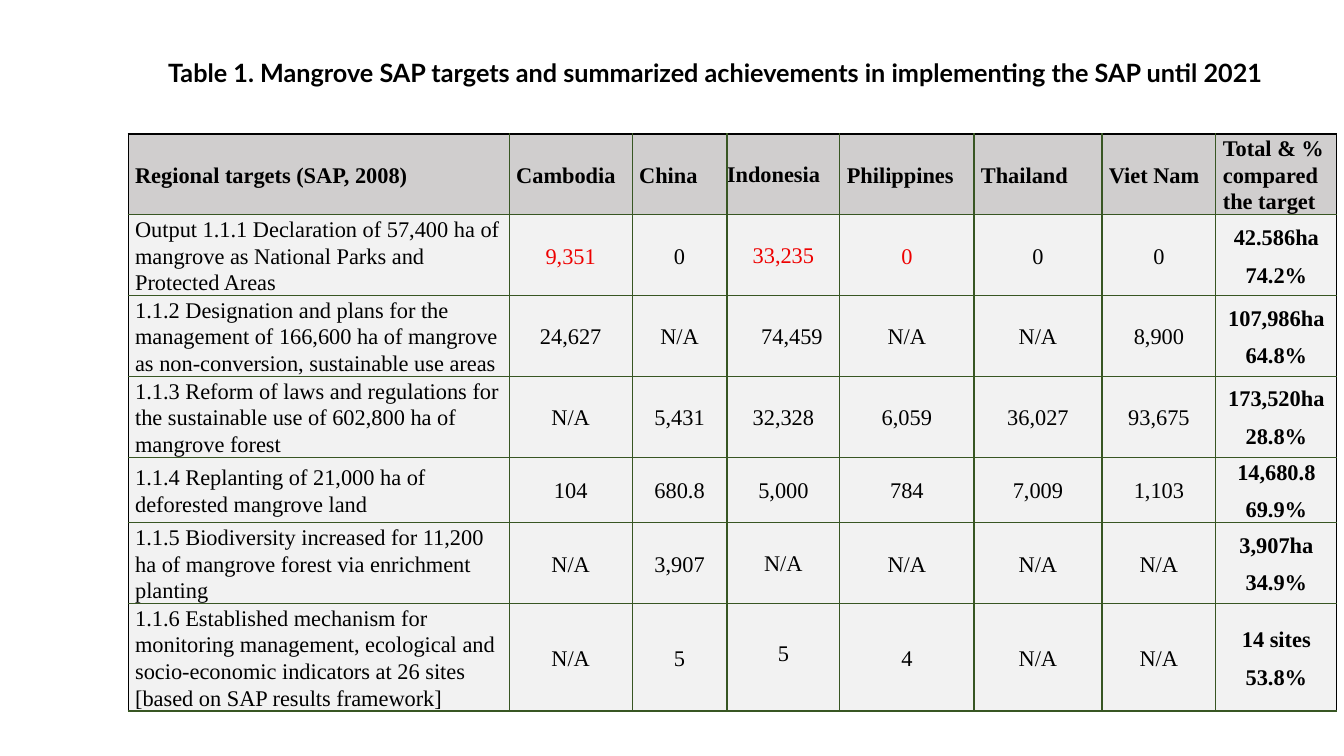
from dataclasses import dataclass

from lxml.etree import SubElement
from pptx import Presentation
from pptx.dml.color import RGBColor
from pptx.enum.text import MSO_ANCHOR, PP_ALIGN
from pptx.oxml.ns import qn
from pptx.slide import Slide
from pptx.table import _Cell
from pptx.text.text import TextFrame
from pptx.util import Inches, Length, Pt


@dataclass(frozen=True)
class Theme:
    title_font: str = "Lato"
    table_font: str = "Times New Roman"
    title_size: int = 18
    table_size: int = 16
    text: str = "000000"
    highlight: str = "EE0000"
    header_fill: str = "D0CECE"
    body_fill: str = "F2F2F2"
    inner_border: str = "385623"
    outer_border: str = "000000"
    border_width: int = 1


@dataclass(frozen=True)
class Target:
    name: str
    countries: tuple[str, ...]
    total: str
    share: str
    highlighted: tuple[int, ...] = ()


@dataclass(frozen=True)
class Margins:
    left: float = 0.07
    top: float = 0.01
    right: float = 0.07
    bottom: float = 0


THEME = Theme()
SLIDE_WIDTH = Inches(13.33)
SLIDE_HEIGHT = Inches(7.5)
COLUMNS = (3.78, 1.22, 0.94, 1.12, 1.33, 1.27, 1.13, 1.2)
ROWS = (0.76, 0.76, 0.76, 0.76, 0.65, 0.71, 1.02)
INDONESIA = 3
TOTAL = len(COLUMNS) - 1
TIGHT = Margins(0, 0, 0, 0)
SPECIAL_MARGINS = {
    (2, INDONESIA): Margins(0.17, 0, 0, 0),
    (6, INDONESIA): Margins(0, 0, 0, 0.08),
}
TITLE = "Table 1. Mangrove SAP targets and summarized achievements in implementing the SAP until 2021"
HEADERS = (
    "Regional targets (SAP, 2008)", "Cambodia", "China", "Indonesia",
    "Philippines", "Thailand", "Viet Nam", "Total & % compared the target",
)
TARGETS = (
    Target("Output 1.1.1 Declaration of 57,400 ha of mangrove as National Parks and Protected Areas",
           ("9,351", "0", "33,235", "0", "0", "0"), "42.586ha", "74.2%", (1, 3, 4)),
    Target("1.1.2 Designation and plans for the management of 166,600 ha of mangrove "
           "as non-conversion, sustainable use areas",
           ("24,627", "N/A", "74,459", "N/A", "N/A", "8,900"), "107,986ha", "64.8%"),
    Target("1.1.3 Reform of laws and regulations for the sustainable use of 602,800 ha of mangrove forest",
           ("N/A", "5,431", "32,328", "6,059", "36,027", "93,675"), "173,520ha", "28.8%"),
    Target("1.1.4 Replanting of 21,000 ha of deforested mangrove land",
           ("104", "680.8", "5,000", "784", "7,009", "1,103"), "14,680.8", "69.9%"),
    Target("1.1.5 Biodiversity increased for 11,200 ha of mangrove forest via enrichment planting",
           ("N/A", "3,907", "N/A", "N/A", "N/A", "N/A"), "3,907ha", "34.9%"),
    Target("1.1.6 Established mechanism for monitoring management, ecological and socio-economic "
           "indicators at 26 sites [based on SAP results framework]",
           ("N/A", "5", "5", "4", "N/A", "N/A"), "14 sites", "53.8%"),
)


def across(percent: float) -> Length:
    return Length(round(SLIDE_WIDTH * percent / 100))


def down(percent: float) -> Length:
    return Length(round(SLIDE_HEIGHT * percent / 100))


def write_text(frame: TextFrame, text: str, *, font: str, size: int, bold: bool = False,
               color: str = THEME.text, align: PP_ALIGN = PP_ALIGN.LEFT,
               line_spacing: float = 1.0, space_after: int = 0) -> None:
    for index, line in enumerate(text.split("\n")):
        para = frame.add_paragraph() if index else frame.paragraphs[0]
        para.alignment = align
        para.line_spacing = line_spacing
        para.space_after = Pt(space_after)
        span = para.add_run()
        span.text = line
        span.font.name = font
        span.font.size = Pt(size)
        span.font.bold = bold
        span.font.color.rgb = RGBColor.from_string(color)


def draw_borders(cell: _Cell, row: int, column: int) -> None:
    outer_sides = {"lnL": column == 0, "lnR": column == TOTAL, "lnT": row == 0, "lnB": False}
    properties = cell._tc.get_or_add_tcPr()
    for side, is_outer in outer_sides.items():
        line = SubElement(properties, qn(f"a:{side}"), w=str(Pt(THEME.border_width)))
        fill = SubElement(line, qn("a:solidFill"))
        color = THEME.outer_border if is_outer else THEME.inner_border
        SubElement(fill, qn("a:srgbClr"), val=color)


def draw_cell(cell: _Cell, row: int, column: int, text: str, highlighted: bool) -> None:
    draw_borders(cell, row, column)
    is_header = row == 0
    cell.fill.solid()
    cell.fill.fore_color.rgb = RGBColor.from_string(THEME.header_fill if is_header else THEME.body_fill)
    usual_margins = TIGHT if column == INDONESIA else Margins()
    margins = SPECIAL_MARGINS.get((row, column), usual_margins)
    cell.margin_left = Inches(margins.left)
    cell.margin_top = Inches(margins.top)
    cell.margin_right = Inches(margins.right)
    cell.margin_bottom = Inches(margins.bottom)
    cell.vertical_anchor = MSO_ANCHOR.MIDDLE
    write_text(
        cell.text_frame, text, font=THEME.table_font, size=THEME.table_size,
        bold=is_header or column == TOTAL,
        color=THEME.highlight if highlighted else THEME.text,
        align=PP_ALIGN.LEFT if is_header or column == 0 else PP_ALIGN.CENTER,
        line_spacing=1.07, space_after=8,
    )


def draw_table(page: Slide) -> None:
    frame = page.shapes.add_table(
        len(ROWS), len(COLUMNS), across(9.53), down(17.73),
        Inches(sum(COLUMNS)), Inches(sum(ROWS)),
    )
    table = frame.table
    table.first_row = False
    table.horz_banding = False
    for column, width in zip(table.columns, COLUMNS):
        column.width = Inches(width)
    for row, height in zip(table.rows, ROWS):
        row.height = Inches(height)
    for column_index, header in enumerate(HEADERS):
        draw_cell(table.cell(0, column_index), 0, column_index, header, False)
    for row_index, target in enumerate(TARGETS, start=1):
        texts = (target.name, *target.countries, f"{target.total}\n{target.share}")
        for column_index, text in enumerate(texts):
            draw_cell(table.cell(row_index, column_index), row_index, column_index, text,
                      column_index in target.highlighted)


def draw_title(page: Slide) -> None:
    box = page.shapes.add_textbox(across(11.78), down(6.93), across(85.45), down(9.47))
    box.text_frame.word_wrap = True
    write_text(box.text_frame, TITLE, font=THEME.title_font, size=THEME.title_size, bold=True)


def main() -> None:
    deck = Presentation()
    deck.slide_width = SLIDE_WIDTH
    deck.slide_height = SLIDE_HEIGHT
    page = deck.slides.add_slide(deck.slide_layouts[6])
    draw_table(page)
    draw_title(page)
    deck.save("out.pptx")


if __name__ == "__main__":
    main()
